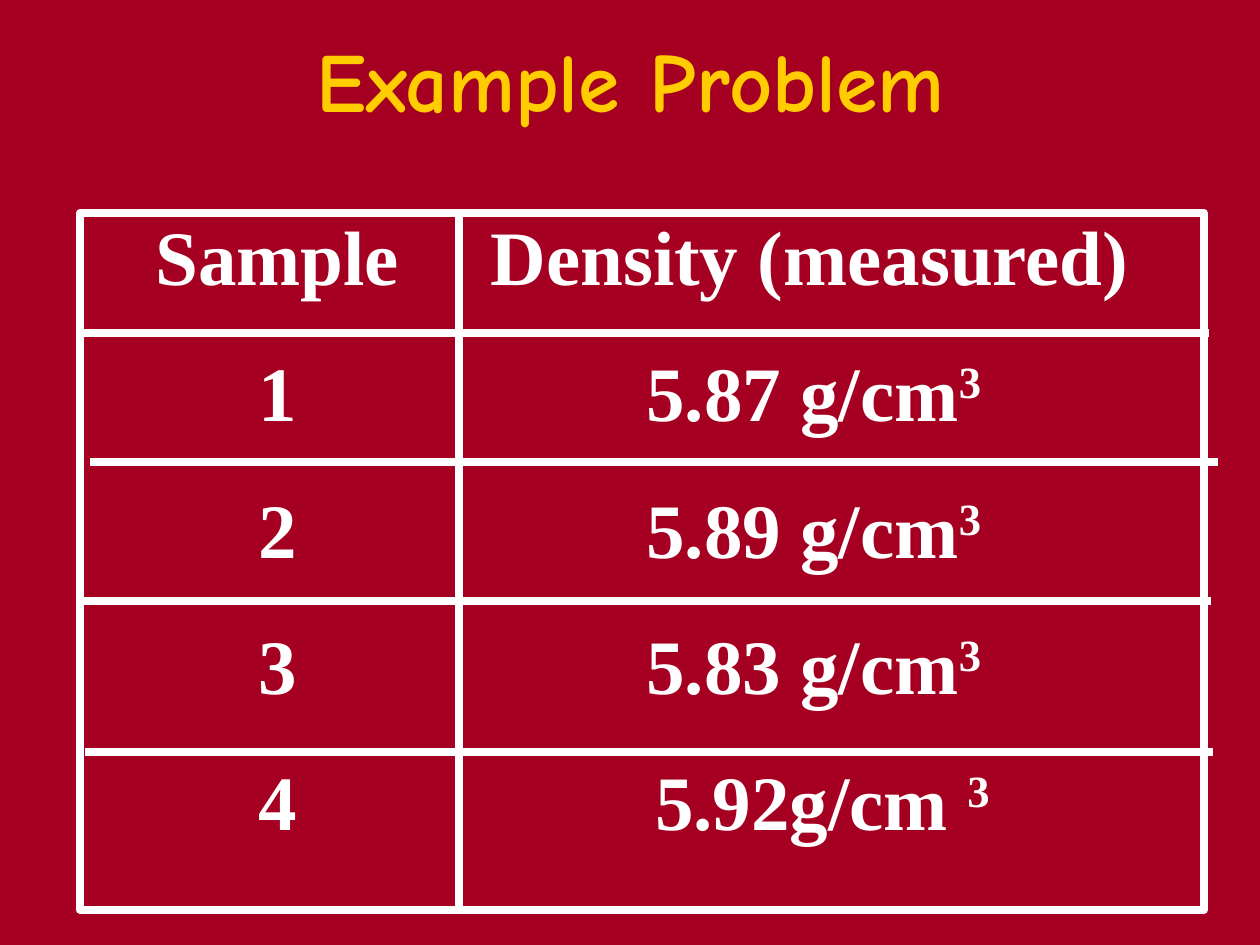
from lxml import etree
from pptx import Presentation
from pptx import util as u
from pptx.dml.color import RGBColor
from pptx.enum import shapes, text
from pptx.oxml.ns import qn

RED = RGBColor(0xA5, 0x00, 0x21)
GOLD = RGBColor(0xFF, 0xCC, 0x00)
WHITE = RGBColor(0xFF, 0xFF, 0xFF)
SERIF = "Times New Roman"
HEADS = ("Sample ", "Density (measured) ")
# sample, density, raised part, shift to the right
ROWS = (
    ("1 ", "5.87 g/cm", "3 ", 0),
    ("2 ", "5.89 g/cm", "3 ", 0),
    ("3 ", "5.83 g/cm", "3 ", 0),
    ("4 ", "5.92g/cm ", "3", 3),
)
# left and top of each row rule, from the corner of the frame
RULES = ((1, 120), (10, 249), (3, 388), (5, 539))
PITCH = 136.3


def px(n):
    return u.Emu(round(n * 914400 / 126))


def style(run, font, size, color):
    run.font.name = font
    run.font.size = u.Pt(size)
    run.font.bold = True
    run.font.color.rgb = color


def title(slide, box):
    shape = slide.shapes.title
    shape.left, shape.top, shape.width, shape.height = map(px, box)
    frame = shape.text_frame
    frame.text = "Example Problem"
    frame.vertical_anchor = text.MSO_ANCHOR.MIDDLE
    para = frame.paragraphs[0]
    para.alignment = text.PP_ALIGN.CENTER
    style(para.runs[0], "Comic Neue", 48, GOLD)


def cell(slide, box, words, power=""):
    frame = slide.shapes.add_textbox(*map(px, box)).text_frame
    frame.word_wrap = True
    frame.text = words
    para = frame.paragraphs[0]
    para.alignment = text.PP_ALIGN.CENTER
    if power:
        run = para.add_run()
        run.text = power
        run.font._element.set("baseline", "30000")
    for run in para.runs:
        style(run, SERIF, 44, WHITE)


def cells(slide, box):
    left, top, wide, high = box
    split = 344
    for i, (name, value, power, shift) in enumerate(((*HEADS, "", 0), *ROWS)):
        y = top + round(i * PITCH)
        cell(slide, (left, y, split, high), name)
        cell(slide, (left + split + shift, y, wide - split, high), value, power)


def rule(slide, x1, y1, x2, y2):
    line = slide.shapes.add_connector(
        shapes.MSO_CONNECTOR.STRAIGHT, *map(px, (x1, y1, x2, y2)))
    line.line.color.rgb = WHITE
    line.line.width = u.Pt(4.5)
    etree.SubElement(line._element.spPr, qn("a:effectLst"))


def grid(slide, box):
    """Draw the frame, the column rule and the row rules."""
    left, top, wide, high = box
    rect = slide.shapes.add_shape(shapes.MSO_SHAPE.RECTANGLE, *map(px, box))
    rect.shadow.inherit = False
    rect.fill.background()
    rect.line.color.rgb = WHITE
    rect.line.width = u.Pt(4.5)
    rule(slide, left + 379, top + 4, left + 379, top + high + 1)
    for x, y in RULES:
        rule(slide, left + x, top + y, left + x + wide + 4, top + y)


def main():
    deck = Presentation()
    deck.slide_width, deck.slide_height = px(1260), px(945)
    slide = deck.slides.add_slide(deck.slide_layouts[5])
    slide.background.fill.solid()
    slide.background.fill.fore_color.rgb = RED
    title(slide, (95, 0, 1071, 158))
    cells(slide, (115, 202, 1065, 136))
    grid(slide, (80, 213, 1124, 697))
    deck.save("out.pptx")


if __name__ == "__main__":
    main()
